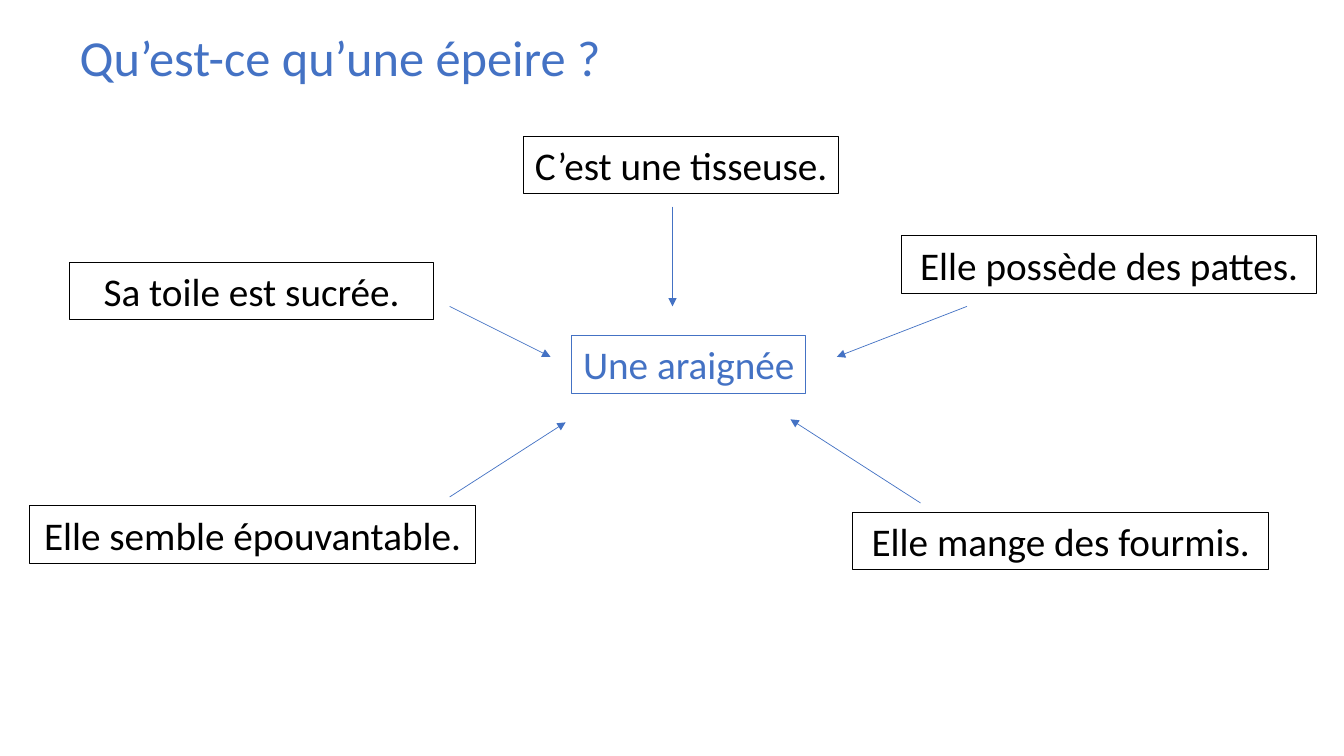
from lxml.etree import SubElement
from pptx import Presentation
from pptx.dml.color import RGBColor
from pptx.enum.shapes import MSO_CONNECTOR
from pptx.enum.text import MSO_AUTO_SIZE, PP_ALIGN
from pptx.oxml.ns import qn
from pptx.util import Inches, Pt

BLUE = "4472C4"
BLACK = "000000"
BOX_HEIGHT = 0.57

CLUES = [
    ("C’est une tisseuse.", 5.19, 1.35, 3.13),
    ("Sa toile est sucrée.", 0.69, 2.6, 3.61),
    ("Elle possède des pattes.", 8.94, 2.34, 4.12),
    ("Elle semble épouvantable.", 0.29, 5.02, 4.43),
    ("Elle mange des fourmis.", 8.46, 5.08, 4.12),
]

ARROWS = [
    (6.67, 2.05, 6.67, 3.04),
    (9.59, 3.04, 8.3, 3.54),
    (9.13, 4.99, 7.84, 4.16),
    (4.46, 4.93, 5.61, 4.19),
    (4.46, 3.04, 5.46, 3.54),
]


def rgb(color):
    return RGBColor.from_string(color)


def add_text(s, text, left, top, width, height, size, color):
    sp = s.shapes.add_textbox(Inches(left), Inches(top), Inches(width), Inches(height))
    tf = sp.text_frame
    tf.word_wrap = True
    tf.auto_size = MSO_AUTO_SIZE.SHAPE_TO_FIT_TEXT
    p = tf.paragraphs[0]
    p.text = text
    p.alignment = PP_ALIGN.CENTER
    p.font.name = "Calibri"
    p.font.size = Pt(size)
    p.font.color.rgb = rgb(color)
    return sp


def add_box(s, text, left, top, width, color):
    sp = add_text(s, text, left, top, width, BOX_HEIGHT, 28, color)
    sp.line.color.rgb = rgb(color)
    sp.line.width = Pt(0.75)


def add_arrow(s, x1, y1, x2, y2):
    arrow = s.shapes.add_connector(
        MSO_CONNECTOR.STRAIGHT, Inches(x1), Inches(y1), Inches(x2), Inches(y2))
    arrow.line.color.rgb = rgb(BLUE)
    arrow.line.width = Pt(0.5)
    SubElement(arrow.line._get_or_add_ln(), qn("a:tailEnd"), type="triangle")
    SubElement(arrow._element.spPr, qn("a:effectLst"))


def main():
    prs = Presentation()
    prs.slide_width = Inches(13.33)
    prs.slide_height = Inches(7.5)
    s = prs.slides.add_slide(prs.slide_layouts[6])
    add_text(s, "Qu’est-ce qu’une épeire ?", 0.03, 0.21, 6.69, 0.71, 36, BLUE)
    for text, left, top, width in CLUES:
        add_box(s, text, left, top, width, BLACK)
    add_box(s, "Une araignée", 5.67, 3.33, 2.32, BLUE)
    for ends in ARROWS:
        add_arrow(s, *ends)
    prs.save("out.pptx")


if __name__ == "__main__":
    main()
